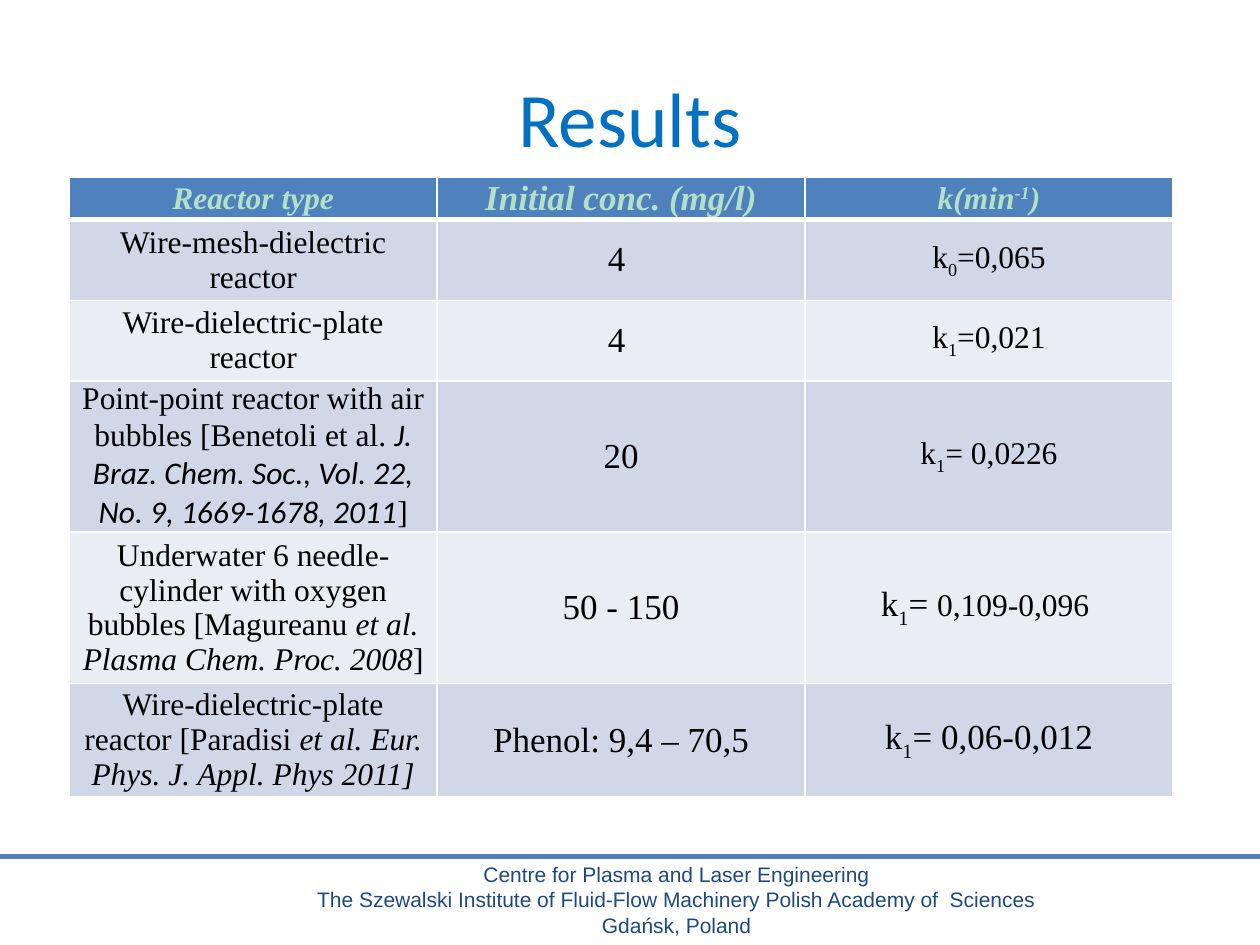
import pptx
import pptx.util
import pptx.dml.color
import pptx.enum.shapes
import pptx.enum.text
import pptx.oxml.ns
from lxml import etree

Inches, Pt = pptx.util.Inches, pptx.util.Pt
qn = pptx.oxml.ns.qn
COLORS = {
    "title": "0070C0", "footer": "1F497D", "accent": "4F81BD",
    "header_text": "B3E1C7", "text": "000000", "border": "FFFFFF",
    "odd_row": "D0D8E8", "even_row": "E9EDF4",
}
SERIF, SANS = "Times New Roman", "Calibri"

# Run styles: italic, font, size, baseline
ITALIC = {"italic": True}
CITATION = {"italic": True, "name": SANS}
SMALL = {"size": Pt(18)}
SUB, SUP = {"baseline": -25000}, {"baseline": 30000}


def rgb(key):
    return pptx.dml.color.RGBColor.from_string(COLORS[key])


class SlideBuilder:
    def __init__(self, prs):
        self.s = prs.slides.add_slide(prs.slide_layouts[6])

    def paragraph(self, p, runs, size, font, color, **style):
        p.alignment = pptx.enum.text.PP_ALIGN.CENTER
        p.font.size, p.font.name = Pt(size), font
        p.font.color.rgb = rgb(color)
        for name, value in style.items():
            setattr(p.font, name, value)
        for text, run_style in runs:
            r = p.add_run()
            r.text = text
            for name, value in run_style.items():
                if name == "baseline":
                    r.font._element.set("baseline", str(value))
                else:
                    setattr(r.font, name, value)

    def text(self, box, lines, size, font, color, anchor):
        sp = self.s.shapes.add_textbox(*map(Inches, box))
        tf = sp.text_frame
        tf.word_wrap, tf.vertical_anchor = True, anchor
        for i, line in enumerate(lines):
            p = tf.add_paragraph() if i else tf.paragraphs[0]
            self.paragraph(p, [(line, {})], size, font, color)

    def line(self, x1, y1, x2, y2, color, width):
        cxn = self.s.shapes.add_connector(
            pptx.enum.shapes.MSO_CONNECTOR.STRAIGHT,
            *map(Inches, (x1, y1, x2, y2)))
        cxn.line.color.rgb, cxn.line.width = rgb(color), Pt(width)
        etree.SubElement(cxn._element.spPr, qn("a:effectLst"))

    def borders(self, cell, row):
        widths = {"lnL": 1, "lnR": 1, "lnT": 3 if row == 1 else 1,
                  "lnB": 3 if row == 0 else 1}
        tc_pr = cell._tc.get_or_add_tcPr()
        for side, width in widths.items():
            ln = etree.SubElement(tc_pr, qn("a:" + side), w=str(Pt(width)))
            fill = etree.SubElement(ln, qn("a:solidFill"))
            etree.SubElement(fill, qn("a:srgbClr"), val=COLORS["border"])

    def table(self, left, top, col_width, heights, rows):
        cols = len(rows[0])
        table = self.s.shapes.add_table(
            len(rows), cols, Inches(left), Inches(top),
            Inches(col_width * cols), Inches(sum(heights))).table
        for col in table.columns:
            col.width = Inches(col_width)
        for i, row in enumerate(rows):
            table.rows[i].height = Inches(heights[i])
            header = i == 0
            fill = "accent" if header else "odd_row" if i % 2 else "even_row"
            for j, (size, *runs) in enumerate(row):
                cell = table.cell(i, j)
                cell.margin_left = cell.margin_right = Inches(0.07)
                cell.margin_top = cell.margin_bottom = 0
                cell.vertical_anchor = pptx.enum.text.MSO_ANCHOR.MIDDLE
                self.borders(cell, i)
                cell.fill.solid()
                cell.fill.fore_color.rgb = rgb(fill)
                self.paragraph(cell.text_frame.paragraphs[0], runs, size, SERIF,
                               "header_text" if header else "text",
                               bold=header, italic=header)


def plain(size, text):
    return (size, (text, {}))


def rate(size, order, *value):
    return (size, ("k", {}), (order, SUB), *value)


# Table content: each cell is a text size followed by its runs
ROWS = [
    [plain(18, "Reactor type"), plain(20, "Initial conc. (mg/l)"),
     (18, ("k(min", {}), ("-1", SUP), (")", {}))],
    [plain(18, "Wire-mesh-dielectric reactor"), plain(20, "4 "),
     rate(18, "0", ("=0,065", {}))],
    [plain(18, "Wire-dielectric-plate reactor"), plain(20, "4 "),
     rate(18, "1", ("=0,021", {}))],
    [(18, ("Point-point reactor with air bubbles [Benetoli et al. ", {}),
      ("J. Braz. Chem. Soc., Vol. 22, No. 9, 1669-1678, 2011", CITATION),
      ("]", {})),
     plain(20, "20"), rate(18, "1", ("= 0,0226", {}))],
    [(18, ("Underwater 6 needle-cylinder with oxygen bubbles [Magureanu", {}),
      (" et al. Plasma Chem. Proc. 2008", ITALIC), ("]", {})),
     plain(20, "50 - 150"),
     rate(20, "1", ("= ", {}), ("0,109-0,096 ", SMALL))],
    [(18, ("Wire-dielectric-plate reactor [Paradisi", {}),
      (" et al. Eur. Phys. J. Appl. Phys 2011]", ITALIC)),
     plain(20, "Phenol: 9,4 – 70,5"), rate(20, "1", ("= 0,06-0,012", {}))],
]
HEIGHTS = [0.3, 0.64, 0.64, 1.19, 1.11, 0.83]


def main():
    prs = pptx.Presentation()
    prs.slide_width, prs.slide_height = Inches(10), Inches(7.5)
    slide = SlideBuilder(prs)
    anchor = pptx.enum.text.MSO_ANCHOR

    # Footer
    slide.text((1.41, 6.79, 7.92, 0.71), [
        "Centre for Plasma and Laser Engineering",
        "The Szewalski Institute of Fluid-Flow Machinery Polish Academy of  Sciences",
        "Gdańsk, Poland",
    ], 12, "Arial", "footer", anchor.TOP)
    slide.line(0, 6.8, 10, 6.8, "accent", 3)

    # Title and results table
    slide.text((0.5, 0.3, 9, 1.25), ["Results"], 44, SANS, "title", anchor.MIDDLE)
    slide.table(0.55, 1.41, 2.92, HEIGHTS, ROWS)

    prs.save("out.pptx")


if __name__ == "__main__":
    main()
